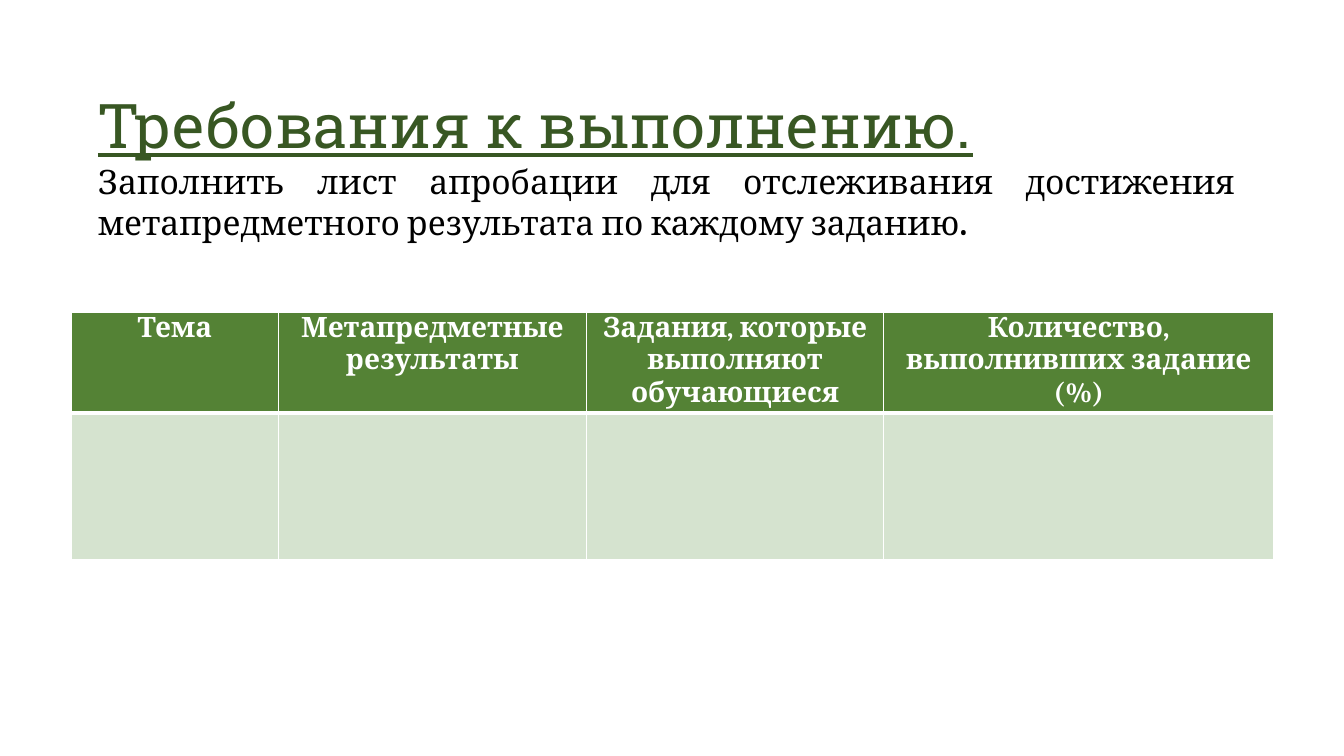
from lxml.etree import SubElement
from pptx import Presentation
from pptx.dml.color import RGBColor
from pptx.enum.text import MSO_ANCHOR as Anchor, MSO_AUTO_SIZE as AutoSize, PP_ALIGN as Align
from pptx.oxml.ns import qn
from pptx.util import Cm, Pt

COLORS = {
    "heading": "385723",
    "text": "000000",
    "white": "FFFFFF",
    "header": "548235",
    "cell": "D5E3CF",
}
HEADERS = [
    "Тема",
    "Метапредметные результаты",
    "Задания, которые выполняют обучающиеся",
    "Количество, выполнивших задание (%)",
]
COLUMN_WIDTHS = [5.21, 7.77, 7.49, 9.83]
ROW_HEIGHTS = [2.46, 3.68]


def add_text(paragraph, text, font="Cambria", size=24, color="text", bold=False, underline=False):
    run = paragraph.add_run()
    run.text = text
    run.font.name = font
    run.font.size = Pt(size)
    run.font.bold = bold
    run.font.underline = underline
    run.font.color.rgb = RGBColor.from_string(COLORS[color])


def set_borders(cell, **widths):
    """Draw white borders; widths are points keyed by side: L, R, T, B."""
    properties = cell._tc.get_or_add_tcPr()
    for side in "LRTB":
        line = SubElement(properties, qn(f"a:ln{side}"), w=str(Pt(widths.get(side, 1))))
        fill = SubElement(line, qn("a:solidFill"))
        SubElement(fill, qn("a:srgbClr"), val=COLORS["white"])


class RequirementsSlide:
    def __init__(self, presentation):
        self.slide = presentation.slides.add_slide(presentation.slide_layouts[5])

    def add_heading(self, left, top, width, height):
        heading = self.slide.shapes.title
        heading.left, heading.top = Cm(left), Cm(top)
        heading.width, heading.height = Cm(width), Cm(height)
        frame = heading.text_frame
        frame.word_wrap = True
        frame.auto_size = AutoSize.SHAPE_TO_FIT_TEXT
        frame.vertical_anchor = Anchor.TOP

        requirement = frame.paragraphs[0]
        requirement.line_spacing = 1.5
        add_text(requirement, "Требования к выполнению.", font="Roboto Slab",
                 size=44, color="heading", underline=True)
        instruction = frame.add_paragraph()
        add_text(instruction, "Заполнить лист апробации для отслеживания достижения "
                              "метапредметного результата по каждому заданию")
        add_text(instruction, ".", bold=True)
        for paragraph in frame.paragraphs:
            paragraph.alignment = Align.JUSTIFY

    def add_trial_sheet(self, left, top):
        sheet = self.slide.shapes.add_table(
            len(ROW_HEIGHTS), len(HEADERS), Cm(left), Cm(top),
            Cm(sum(COLUMN_WIDTHS)), Cm(sum(ROW_HEIGHTS))).table
        for column, width in zip(sheet.columns, COLUMN_WIDTHS):
            column.width = Cm(width)
        for row, height in zip(sheet.rows, ROW_HEIGHTS):
            row.height = Cm(height)
        for index, header in enumerate(HEADERS):
            title_cell, result_cell = sheet.cell(0, index), sheet.cell(1, index)
            self.style_cell(title_cell, "header", B=3)
            self.style_cell(result_cell, "cell", T=3)
            paragraph = title_cell.text_frame.paragraphs[0]
            paragraph.alignment = Align.CENTER
            add_text(paragraph, header, size=20, color="white", bold=True)

    def style_cell(self, cell, color, **border_widths):
        set_borders(cell, **border_widths)
        cell.fill.solid()
        cell.fill.fore_color.rgb = RGBColor.from_string(COLORS[color])
        cell.margin_left = cell.margin_right = Cm(0.19)
        cell.margin_top = cell.margin_bottom = 0


def main():
    presentation = Presentation()
    presentation.slide_width, presentation.slide_height = Cm(33.87), Cm(19.05)
    requirements = RequirementsSlide(presentation)
    requirements.add_heading(2.21, 1.14, 29.16, 5.13)
    requirements.add_trial_sheet(1.8, 7.87)
    presentation.save("out.pptx")


if __name__ == "__main__":
    main()
